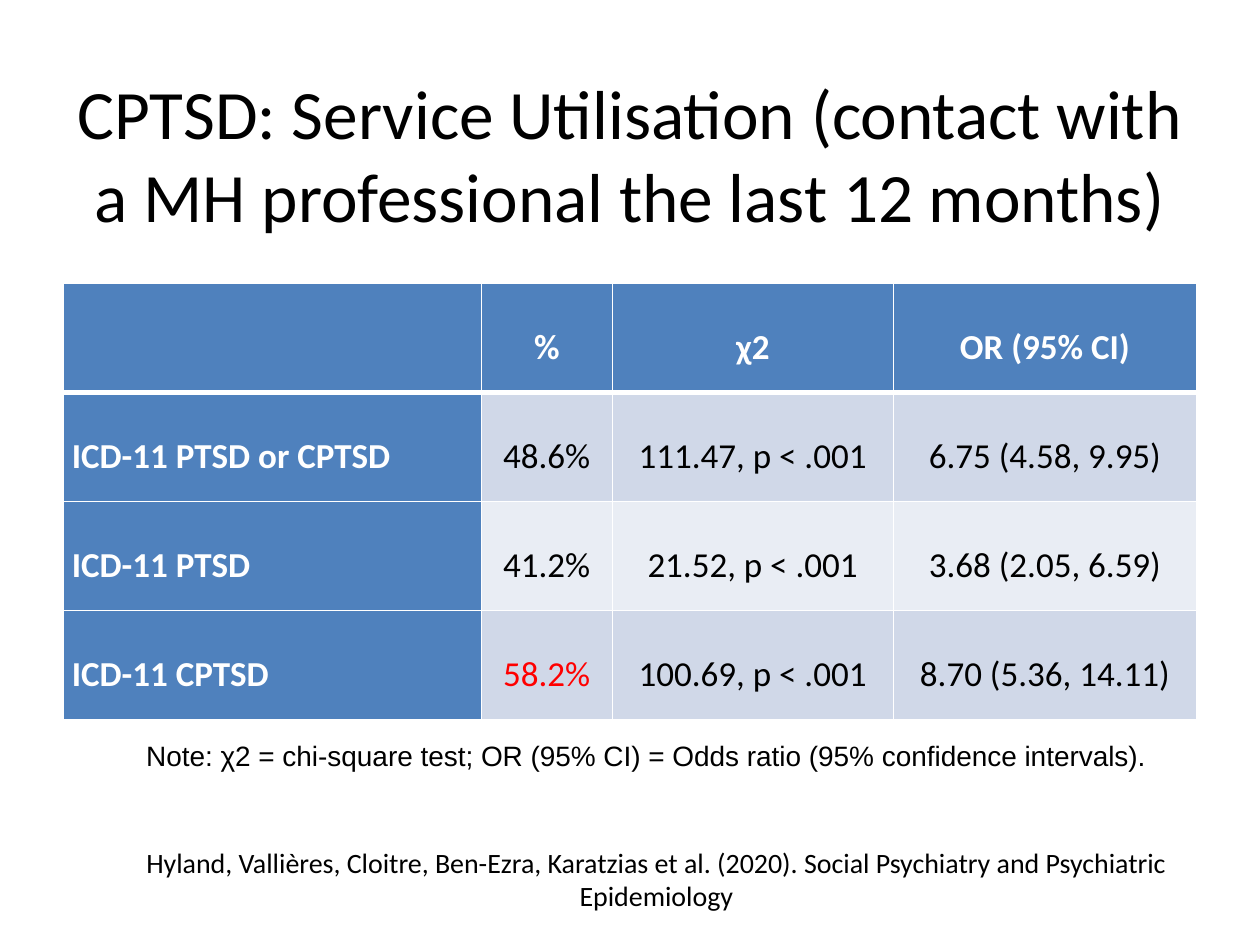
from lxml import etree
from pptx import Presentation
from pptx.dml.color import RGBColor
from pptx.enum.text import MSO_ANCHOR, PP_ALIGN
from pptx.oxml.ns import qn
from pptx.util import Inches, Pt

CENTER, LEFT = PP_ALIGN.CENTER, PP_ALIGN.LEFT
MIDDLE, TOP = MSO_ANCHOR.MIDDLE, MSO_ANCHOR.TOP
BLACK = RGBColor(0x00, 0x00, 0x00)
WHITE = RGBColor(0xFF, 0xFF, 0xFF)
RED = RGBColor(0xFF, 0x00, 0x00)
BLUE = RGBColor(0x4F, 0x81, 0xBD)
BANDS = (RGBColor(0xE9, 0xED, 0xF4), RGBColor(0xD0, 0xD8, 0xE8))

W, H = 10, 7.5
COLS = (3.32, 1.04, 2.23, 2.41)
ROWS = (
    ("", "%", "χ2", "OR (95% CI)"),
    ("ICD-11 PTSD or CPTSD", "48.6%", "111.47, p < .001", "6.75 (4.58, 9.95)"),
    ("ICD-11 PTSD", "41.2%", "21.52, p < .001", "3.68 (2.05, 6.59)"),
    ("ICD-11 CPTSD", "58.2%", "100.69, p < .001", "8.70 (5.36, 14.11)"),
)
HIGHLIGHT = (3, 1)
CELL_FORMAT = {
    "margin_left": Inches(0.07),
    "margin_right": Inches(0.07),
    "margin_top": 0,
    "margin_bottom": 0,
    "vertical_anchor": TOP,
}


def write(p, text, size, color, name="Calibri", bold=False, align=CENTER):
    """Put one formatted run into a paragraph."""
    p.alignment = align
    r = p.add_run()
    r.text = text
    font = {"size": Pt(size), "name": name, "bold": bold}
    for key, value in font.items():
        setattr(r.font, key, value)
    r.font.color.rgb = color


def add_text(slide, box, text, size, name="Calibri"):
    """Place a centred text box."""
    sp = slide.shapes.add_textbox(*map(Inches, box))
    tf = sp.text_frame
    tf.word_wrap = True
    tf.vertical_anchor = MIDDLE
    write(tf.paragraphs[0], text, size, BLACK, name)


def set_borders(cell, widths):
    """Draw white borders around a cell, given widths by side tag."""
    tc_pr = cell._tc.get_or_add_tcPr()
    for i, (tag, width) in enumerate(widths.items()):
        ln = etree.Element(qn(f"a:{tag}"), w=str(Pt(width)))
        fill = etree.SubElement(ln, qn("a:solidFill"))
        etree.SubElement(fill, qn("a:srgbClr"), val=str(WHITE))
        tc_pr.insert(i, ln)


def add_results(slide, box):
    """Place the table of service use by diagnosis."""
    left, top, width, height = box
    shape = slide.shapes.add_table(len(ROWS), len(COLS), *map(Inches, box))
    table = shape.table
    for col, share in zip(table.columns, COLS):
        col.width = Inches(width * share / sum(COLS))
    for i, row in enumerate(ROWS):
        table.rows[i].height = Inches(height / len(ROWS))
        for j, text in enumerate(row):
            cell = table.cell(i, j)
            for key, value in CELL_FORMAT.items():
                setattr(cell, key, value)
            head = i == 0 or j == 0
            cell.fill.solid()
            cell.fill.fore_color.rgb = BLUE if head else BANDS[i % 2]
            set_borders(cell, {"lnL": 1, "lnR": 1,
                               "lnT": 3 if i == 1 else 1,
                               "lnB": 3 if i == 0 else 1})
            if text:
                color = WHITE if head else RED if (i, j) == HIGHLIGHT else BLACK
                p = cell.text_frame.paragraphs[0]
                p.line_spacing = 2.0
                write(p, text, 20, color, bold=head,
                      align=CENTER if j else LEFT)


def add_notes(slide, box):
    """Place the table note at the top and the citation at the foot of a box."""
    left, top, width, height = box
    line = 0.47
    add_text(slide, (left, top, width, line),
             "Note: χ2 = chi-square test; OR (95% CI) = Odds ratio "
             "(95% confidence intervals).", 16, "Arial")
    add_text(slide, (left + 0.08, top + height - line, width, line),
             "Hyland, Vallières, Cloitre, Ben-Ezra, Karatzias et al. (2020). "
             "Social Psychiatry and Psychiatric Epidemiology", 16)


def main():
    """Build the slide and save it."""
    prs = Presentation()
    prs.slide_width, prs.slide_height = Inches(W), Inches(H)
    slide = prs.slides.add_slide(prs.slide_layouts[6])
    left, width = W * 0.05, W * 0.9
    add_text(slide, (left, H * 0.04, width, H * 0.245),
             "CPTSD: Service Utilisation (contact with a MH professional "
             "the last 12 months)", 39.6)
    add_results(slide, (left, H * 0.3, width, 3.46))
    add_notes(slide, (left + 0.01, 5.76, 9.24, 1.45))
    prs.save("out.pptx")


if __name__ == "__main__":
    main()
